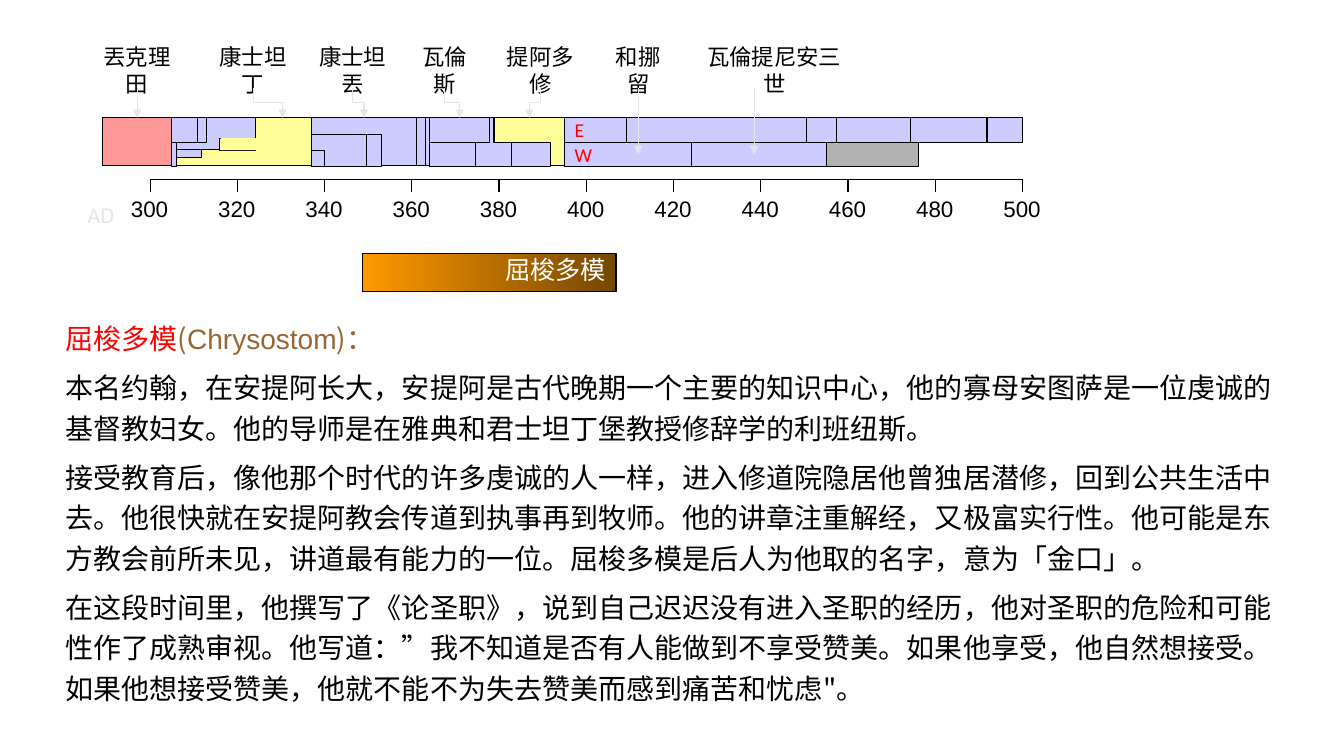
from lxml.etree import SubElement as Sub
from pptx import Presentation
from pptx.dml.color import RGBColor as RGB
from pptx.enum.shapes import MSO_CONNECTOR as LINK, MSO_SHAPE as SHAPE
from pptx.enum.text import MSO_ANCHOR as ANCHOR, PP_ALIGN as ALIGN
from pptx.oxml.ns import qn
from pptx.util import Pt

PX = 9144
BLACK = RGB(0, 0, 0)
WHITE = RGB(255, 255, 255)
RED = RGB(255, 0, 0)
BROWN = RGB(0x99, 0x66, 0x33)
PALE = RGB(0xE7, 0xE6, 0xE6)
LILAC = RGB(0xCC, 0xCC, 0xFF)
PINK = RGB(0xFF, 0x99, 0x99)
CREAM = RGB(0xFF, 0xFF, 0x99)
GRAY = RGB(0xB2, 0xB2, 0xB2)
AMBER = RGB(0xFF, 0x99, 0)
UMBER = RGB(0x76, 0x47, 0)
SANS = "Calibri"
HAN = "Noto Sans CJK SC"
SNUG = dict(margin_left=0, margin_right=0, margin_top=4 * PX, margin_bottom=4 * PX,
            vertical_anchor=ANCHOR.MIDDLE, word_wrap=False)
MARK = dict(vertical_anchor=ANCHOR.MIDDLE, word_wrap=False)
FLOW = dict(line_spacing=Pt(29), space_after=Pt(6), alignment=ALIGN.LEFT)

STRIPS = [
    ([170, 175], 141, 24, LILAC),
    ([102, 170], 117, 47, PINK),
    ([309, 413, 422, 426], 117, 47, LILAC),
    ([560, 686, 820], 141, 24, LILAC, "W"),
    ([820, 911], 141, 24, GRAY),
    ([175, 309], 117, 47, CREAM),
    ([175, 200], 148, 8, LILAC),
    ([175, 253], 117, 31, LILAC),
    ([170, 196, 205], 117, 24, LILAC),
    ([560, 621, 800, 830, 903, 979, 1014], 117, 24, LILAC, "E"),
    ([218, 253], 137, 12, CREAM),
    ([219, 254], 137, 12, CREAM, "", False),
    ([426, 486], 117, 24, LILAC),
    ([426, 472], 141, 24, LILAC),
    ([490, 560], 117, 47, CREAM),
    ([472, 507, 546], 141, 24, LILAC),
    ([486, 490], 117, 24, LILAC),
    ([486, 489], 134, 8, LILAC, "", False),
    ([309, 364, 378], 133, 32, LILAC),
    ([309, 322], 149, 16, LILAC),
]
RULERS = [
    ("丟克理田", 136, 136, 136, 117),
    ("康士坦丁", 251, 251, 280, 117),
    ("康士坦丟", 350, 350, 361, 117),
    ("瓦倫斯", 441, 441, 456, 117),
    ("提阿多修", 536, 536, 525, 117),
    ("和挪留", 633, 633, 633, 153),
    ("瓦倫提尼安三世", 768, 748, 748, 153),
]
STORY = [
    [("屈梭多模", HAN, RED), ("(", HAN, BROWN), ("Chrysostom", "Arial", BROWN),
     (")：", HAN, BROWN)],
    [("本名约翰，在安提阿长大，安提阿是古代晚期一个主要的知识中心，他的寡母安图萨是一位虔诚的"
      "基督教妇女。他的导师是在雅典和君士坦丁堡教授修辞学的利班纽斯。", HAN, BLACK)],
    [("接受教育后，像他那个时代的许多虔诚的人一样，进入修道院隐居他曾独居潜修，回到公共生活中"
      "去。他很快就在安提阿教会传道到执事再到牧师。他的讲章注重解经，又极富实行性。他可能是东"
      "方教会前所未见，讲道最有能力的一位。屈梭多模是后人为他取的名字，意为「金口」。", HAN, BLACK)],
    [("在这段时间里，他撰写了《论圣职》，说到自己迟迟没有进入圣职的经历，他对圣职的危险和可能"
      "性作了成熟审视。他写道：”我不知道是否有人能做到不享受赞美。如果他享受，他自然想接受。"
      "如果他想接受赞美，他就不能不为失去赞美而感到痛苦和忧虑\"。", HAN, BLACK)],
]


def apply(thing, look):
    """Set each attribute in look on thing."""
    for key, val in look.items():
        setattr(thing, key, val)


class Board:
    """Draws styled elements on one slide, in px."""

    def __init__(self, deck):
        """Add a blank slide to the deck."""
        self.shapes = deck.slides.add_slide(deck.slide_layouts[6]).shapes

    def box(self, *rect):
        """Turn px lengths into EMU."""
        return [int(side * PX) for side in rect]

    def put(self, para, text, size, ink, name=SANS):
        """Add one run of text to a paragraph."""
        run = para.add_run()
        run.text = text
        apply(run.font, dict(name=name, size=Pt(size)))
        run.font.color.rgb = ink
        Sub(run.font._element, qn("a:ea")).set("typeface", name)

    def rect(self, left, top, wide, high, fill, edge=True):
        """Draw a rectangle with a flat fill or a pair of blended colours."""
        shape = self.shapes.add_shape(SHAPE.RECTANGLE, *self.box(left, top, wide, high))
        shape.shadow.inherit = False
        if isinstance(fill, list):
            shape.fill.gradient()
            shape.fill.gradient_angle = 0
            for stop, tone in zip(shape.fill.gradient_stops, fill):
                stop.color.rgb = tone
        else:
            shape.fill.solid()
            shape.fill.fore_color.rgb = fill
        if edge:
            shape.line.color.rgb = BLACK
            shape.line.width = Pt(0.75)
        else:
            shape.line.fill.background()
        return shape

    def strip(self, edges, top, high, fill, mark="", edge=True):
        """Draw adjoining blocks between edges, with a mark in the first."""
        for left, right in zip(edges, edges[1:]):
            shape = self.rect(left, top, right - left, high, fill, edge)
            if mark and left == edges[0]:
                apply(shape.text_frame, MARK)
                para = shape.text_frame.paragraphs[0]
                para.alignment = ALIGN.LEFT
                self.put(para, mark, 14, RED)

    def label(self, text, mid, top, wide, ink=BLACK):
        """Draw a short centred label."""
        frame = self.shapes.add_textbox(*self.box(mid - wide / 2, top, wide, 35)).text_frame
        apply(frame, SNUG)
        para = frame.paragraphs[0]
        para.alignment = ALIGN.CENTER
        self.put(para, text, 16, ink)

    def arrow(self, start, top, end, low):
        """Draw a downward arrow, bent where it must shift sideways."""
        shift = end - start
        if shift:
            half = (low - top) / 2 * (1 if shift > 0 else -1)
            mid, cen, rise = (start + end) / 2, (top + low) / 2, abs(shift) / 2
            link = self.shapes.add_connector(
                LINK.ELBOW, *self.box(mid + half, cen - rise, mid - half, cen + rise))
            turn = 270 if shift > 0 else 90
            link._element.spPr.find(qn("a:xfrm")).set("rot", str(turn * 60000))
        else:
            link = self.shapes.add_connector(LINK.STRAIGHT, *self.box(start, top, end, low))
        link.line.color.rgb = PALE
        link.line.width = Pt(0.75)
        Sub(link.line._get_or_add_ln(), qn("a:tailEnd")).set("type", "triangle")
        Sub(link._element.spPr, qn("a:effectLst"))

    def scale(self, left, top, wide, high, words, ink, fill=None):
        """Draw a one-row table of equal cells."""
        table = self.shapes.add_table(
            1, len(words), *self.box(left, top, wide, high)).table
        apply(table, dict(first_row=False, horz_banding=False))
        for cell, word in zip(table.rows[0].cells, words):
            for side in "LRTB":
                line = Sub(cell._tc.get_or_add_tcPr(), qn(f"a:ln{side}"), w="12700")
                Sub(Sub(line, qn("a:solidFill")), qn("a:srgbClr"), val=str(ink))
            if fill is None:
                cell.fill.background()
            else:
                cell.fill.solid()
                cell.fill.fore_color.rgb = fill
            if word:
                para = cell.text_frame.paragraphs[0]
                para.alignment = ALIGN.CENTER
                self.put(para, word, 16, BLACK, "Arial")

    def banner(self, text, *rect):
        """Draw the shaded life span bar."""
        frame = self.rect(*rect, [AMBER, UMBER]).text_frame
        apply(frame, dict(word_wrap=False, vertical_anchor=ANCHOR.TOP))
        para = frame.paragraphs[0]
        apply(para, dict(alignment=ALIGN.RIGHT, line_spacing=0.85))
        self.put(para, text, 18, WHITE)

    def prose(self, paras, *rect):
        """Draw the body paragraphs."""
        frame = self.shapes.add_textbox(*self.box(*rect)).text_frame
        frame.word_wrap = True
        for num, runs in enumerate(paras):
            para = frame.add_paragraph() if num else frame.paragraphs[0]
            apply(para, FLOW)
            for text, name, ink in runs:
                self.put(para, text, 20, ink, name)


def main():
    """Build and save the slide."""
    deck = Presentation()
    apply(deck, dict(slide_width=1333 * PX, slide_height=750 * PX))
    board = Board(deck)
    board.scale(149, 178, 865, 40, [""] * 10, BLACK)
    years = [str(year) for year in range(300, 501, 20)]
    board.scale(105, 191, 952, 37, years, WHITE, WHITE)
    board.label("AD", 100, 195, 30, PALE)
    for strip in STRIPS:
        board.strip(*strip)
    for name, mid, start, end, low in RULERS:
        board.label(name, mid, 52, 22 * len(name))
        board.arrow(start, 87, end, low)
    board.banner("屈梭多模", 360, 252, 251, 37)
    board.prose(STORY, 55, 307, 1222, 399)
    deck.save("out.pptx")


if __name__ == "__main__":
    main()
